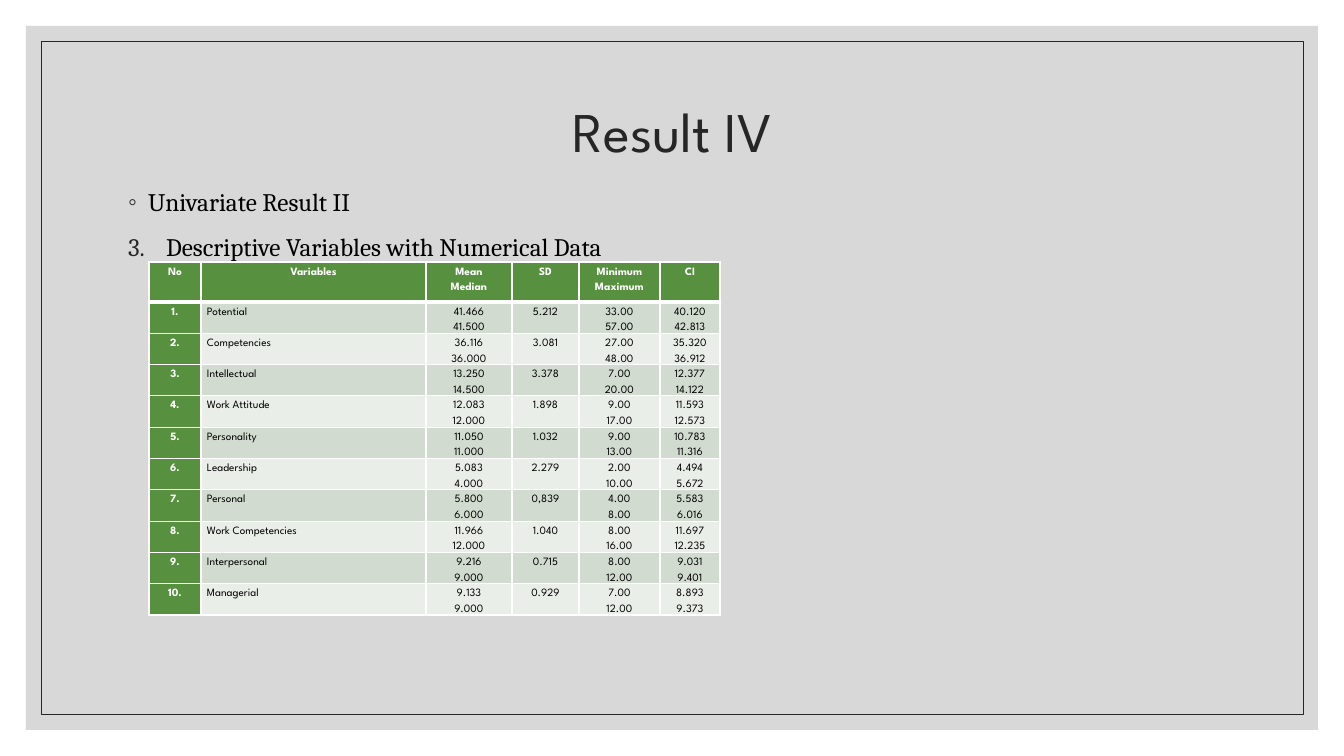
from dataclasses import dataclass
from typing import Optional

from lxml.etree import SubElement
from pptx import Presentation
from pptx.dml.color import RGBColor
from pptx.enum.shapes import MSO_SHAPE
from pptx.enum.text import MSO_ANCHOR as Anchor
from pptx.enum.text import MSO_AUTO_SIZE as AutoSize
from pptx.enum.text import PP_ALIGN as Align
from pptx.oxml.ns import qn
from pptx.util import Emu, Pt

EMU_PER_PX = 914400 / 100.8
WHITE = RGBColor(0xFF, 0xFF, 0xFF)
BLACK = RGBColor(0x00, 0x00, 0x00)
INK = RGBColor(0x26, 0x26, 0x26)
GREY = RGBColor(0xBF, 0xBF, 0xBF)
GREEN = RGBColor(0x57, 0x90, 0x3F)
BAND_DARK = RGBColor(0xD1, 0xDB, 0xCF)
BAND_LIGHT = RGBColor(0xEA, 0xEE, 0xE8)
SANS, SERIF = "League Spartan", "Cambria"


@dataclass(frozen=True)
class Panel:
    left: int
    top: int
    width: int
    height: int
    fill: Optional[RGBColor] = None
    alpha: int = 100
    line: Optional[RGBColor] = None


@dataclass(frozen=True)
class ListItem:
    text: str
    indent: int
    bullet_tag: str
    bullet: dict


@dataclass(frozen=True)
class Variable:
    name: str
    mean_median: str
    deviation: str
    minimum_maximum: str
    interval: str


PANELS = [
    Panel(26, 26, 1292, 704, fill=GREY, alpha=60),
    Panel(41, 41, 1262, 673, line=INK),
]
ITEMS = [
    ListItem("Univariate Result II", 20, "a:buChar", {"char": "◦"}),
    ListItem("Descriptive Variables with Numerical Data", 38, "a:buAutoNum",
             {"type": "arabicPeriod", "startAt": "3"}),
]
HEADER = ["No", "Variables", "Mean\nMedian", "SD", "Minimum\nMaximum", "CI"]
COLUMN_WIDTHS = [52, 225, 86, 67, 81, 60]
HEADER_HEIGHT, ROW_HEIGHT = 40, 26
VARIABLES = [
    Variable("Potential", "41.466\n41.500", "5.212", "33.00\n57.00", "40.120\n42.813"),
    Variable("Competencies", "36.116\n36.000", "3.081", "27.00\n48.00", "35.320\n36.912"),
    Variable("Intellectual", "13.250\n14.500", "3.378", "7.00\n20.00", "12.377\n14.122"),
    Variable("Work Attitude", "12.083\n12.000", "1.898", "9.00\n17.00", "11.593\n12.573"),
    Variable("Personality", "11.050\n11.000", "1.032", "9.00\n13.00", "10.783\n11.316"),
    Variable("Leadership", "5.083\n4.000", "2.279", "2.00\n10.00", "4.494\n5.672"),
    Variable("Personal", "5.800\n6.000", "0,839", "4.00\n8.00", "5.583\n6.016"),
    Variable("Work Competencies", "11.966\n12.000", "1.040", "8.00\n16.00", "11.697\n12.235"),
    Variable("Interpersonal", "9.216\n9.000", "0.715", "8.00\n12.00", "9.031\n9.401"),
    Variable("Managerial", "9.133\n9.000", "0.929", "7.00\n12.00", "8.893\n9.373"),
]


def px(value: int) -> Emu:
    return Emu(round(value * EMU_PER_PX))


def place(shape, left: int, top: int, width: int, height: int) -> None:
    shape.left, shape.top = px(left), px(top)
    shape.width, shape.height = px(width), px(height)


def add_run(paragraph, text: str, font: str, size: int, color: RGBColor,
            align: Align, spacing: float, bold: bool = False) -> None:
    paragraph.alignment = align
    paragraph.line_spacing = spacing
    paragraph.space_before = paragraph.space_after = Pt(0)
    run = paragraph.add_run()
    run.text = text
    run.font.name, run.font.size, run.font.bold = font, Pt(size), bold
    run.font.color.rgb = color


def add_solid_fill(parent, color: RGBColor) -> None:
    SubElement(SubElement(parent, qn("a:solidFill")), qn("a:srgbClr"), val=str(color))


def draw_panel(slide, panel: Panel) -> None:
    shape = slide.shapes.add_shape(MSO_SHAPE.RECTANGLE, px(panel.left), px(panel.top),
                                   px(panel.width), px(panel.height))
    shape.shadow.inherit = False
    if panel.fill is None:
        shape.fill.background()
    else:
        shape.fill.solid()
        shape.fill.fore_color.rgb = panel.fill
        color = shape.element.spPr.find(".//" + qn("a:srgbClr"))
        SubElement(color, qn("a:alpha"), val=str(panel.alpha * 1000))
    if panel.line is None:
        shape.line.fill.background()
    else:
        shape.line.color.rgb = panel.line
        shape.line.width = Pt(0.5)
    # Panels lie behind the title and the list
    slide.shapes.title.element.addprevious(shape.element)


def draw_item(paragraph, item: ListItem) -> None:
    add_run(paragraph, item.text, SERIF, 18, BLACK, Align.JUSTIFY, 1.5)
    properties = paragraph._p.get_or_add_pPr()
    properties.set("marL", str(px(item.indent)))
    properties.set("indent", str(-px(item.indent)))
    SubElement(SubElement(properties, qn("a:buClr")), qn("a:srgbClr"), val=str(INK))
    SubElement(properties, qn(item.bullet_tag), item.bullet)


def draw_cell(cell, text: str, row: int, column: int) -> None:
    heading = row == 0 or column == 0
    cell.margin_left = cell.margin_right = px(6)
    cell.margin_top = cell.margin_bottom = 0
    cell.vertical_anchor = Anchor.TOP
    align = Align.JUSTIFY if column == 1 and row > 0 else Align.CENTER
    for index, line in enumerate(text.split("\n")):
        frame = cell.text_frame
        paragraph = frame.paragraphs[0] if index == 0 else frame.add_paragraph()
        add_run(paragraph, line, SANS, 8, WHITE if heading else BLACK, align, 1.5, heading)

    # White borders, thicker under the header
    properties = cell._tc.get_or_add_tcPr()
    for side in ("L", "R", "T", "B"):
        thick = (row, side) in ((0, "B"), (1, "T"))
        border = SubElement(properties, qn(f"a:ln{side}"), w=str(Pt(3 if thick else 1)))
        add_solid_fill(border, WHITE)

    cell.fill.solid()
    band = BAND_DARK if row % 2 else BAND_LIGHT
    cell.fill.fore_color.rgb = GREEN if heading else band


def draw_table(slide) -> None:
    rows = [HEADER] + [
        [f"{number}.", item.name, item.mean_median, item.deviation,
         item.minimum_maximum, item.interval]
        for number, item in enumerate(VARIABLES, start=1)
    ]
    height = HEADER_HEIGHT + ROW_HEIGHT * len(VARIABLES)
    table = slide.shapes.add_table(len(rows), len(HEADER), px(149), px(262),
                                   px(sum(COLUMN_WIDTHS)), px(height)).table
    for column, width in zip(table.columns, COLUMN_WIDTHS):
        column.width = px(width)
    for row, texts in enumerate(rows):
        table.rows[row].height = px(ROW_HEIGHT if row else HEADER_HEIGHT)
        for column, text in enumerate(texts):
            draw_cell(table.cell(row, column), text, row, column)


def main() -> None:
    presentation = Presentation()
    presentation.slide_width, presentation.slide_height = px(1344), px(756)
    slide = presentation.slides.add_slide(presentation.slide_layouts[1])

    # Background panels
    for panel in PANELS:
        draw_panel(slide, panel)

    # Title
    title = slide.shapes.title
    place(title, 118, 81, 1109, 107)
    title.text_frame.auto_size = AutoSize.NONE
    title.text_frame.vertical_anchor = Anchor.MIDDLE
    add_run(title.text_frame.paragraphs[0], "Result IV", SANS, 40, INK, Align.CENTER, 0.9)

    # List
    body = slide.placeholders[1]
    place(body, 118, 166, 1109, 424)
    frame = body.text_frame
    frame.auto_size = AutoSize.NONE
    frame.vertical_anchor = Anchor.TOP
    for index, item in enumerate(ITEMS):
        draw_item(frame.paragraphs[0] if index == 0 else frame.add_paragraph(), item)

    # Descriptive statistics
    draw_table(slide)
    presentation.save("out.pptx")


if __name__ == "__main__":
    main()
